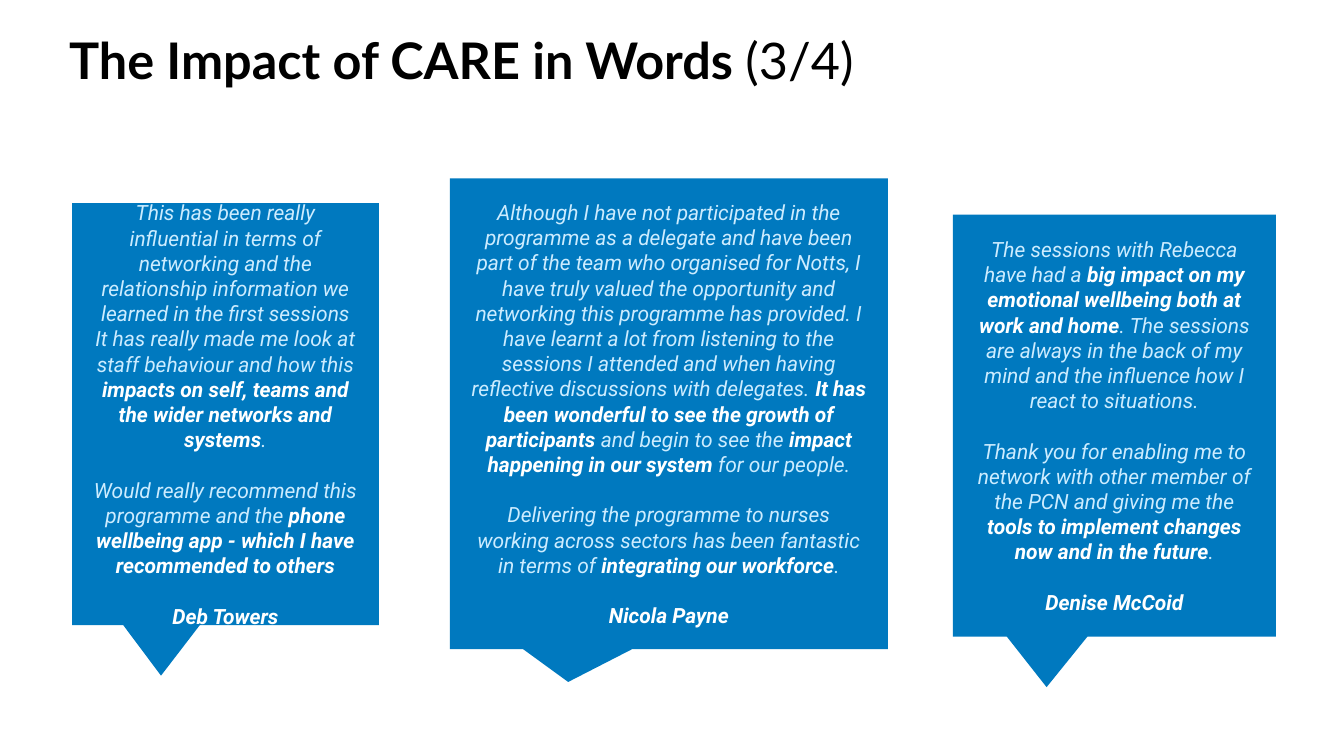
from pptx import Presentation
from pptx.dml.color import RGBColor
from pptx.enum.shapes import MSO_SHAPE
from pptx.enum.text import MSO_ANCHOR, MSO_AUTO_SIZE, PP_ALIGN
from pptx.util import Cm, Pt

CALLOUT = MSO_SHAPE.RECTANGULAR_CALLOUT
MIDDLE = MSO_ANCHOR.MIDDLE
NO_AUTOFIT = MSO_AUTO_SIZE.NONE
CENTER, LEFT = PP_ALIGN.CENTER, PP_ALIGN.LEFT

BLACK = RGBColor(0x00, 0x00, 0x00)
WHITE = RGBColor(0xFF, 0xFF, 0xFF)
BLUE = RGBColor(0x00, 0x79, 0xBF)
PALE_BLUE = RGBColor(0xCC, 0xEC, 0xFF)

TITLE_FONT, QUOTE_FONT = "Lato", "Roboto"
DEFAULT_TAIL = (-0.21, 0.62)
STRONG = "**"

DEB_QUOTE = [
    "This has been really influential in terms of networking and the relationship "
    "information we learned in the first sessions\n"
    "It has really made me look at staff behaviour and how this "
    "**impacts on self, teams and the wider networks and systems**.",
    "Would really recommend this programme and the "
    "**phone wellbeing app - which I have recommended to others**",
    "**Deb Towers**",
]
NICOLA_QUOTE = [
    "Although I have not participated in the programme as a delegate and have been part "
    "of the team who organised for Notts, I have truly valued the opportunity and "
    "networking this programme has provided. I have learnt a lot from listening to the "
    "sessions I attended and when having reflective discussions with delegates. "
    "**It has been wonderful to see the growth of participants **and begin to see the "
    "**impact happening in our system **for our people.",
    "Delivering the programme to nurses working across sectors has been fantastic "
    "in terms of **integrating our workforce**.",
    "**Nicola Payne**",
]
DENISE_QUOTE = [
    "The sessions with Rebecca have had a "
    "**big impact on my emotional wellbeing both at work and home**. The sessions are "
    "always in the back of my mind and the influence how I react to situations.",
    "Thank you for enabling me to network with other member of the PCN and giving me the "
    "**tools to implement changes now and in the future**.",
    "**Denise McCoid**",
]


def add_title(slide, name, counter):
    title = slide.shapes.title
    title.left, title.top, title.width, title.height = Cm(3.23), Cm(1.5), Cm(58.37), Cm(3)
    frame = title.text_frame
    frame.auto_size = NO_AUTOFIT
    frame.vertical_anchor = MIDDLE
    heading = frame.paragraphs[0]
    heading.alignment = LEFT
    heading.font.name = TITLE_FONT
    heading.font.size = Pt(72)
    heading.font.color.rgb = BLACK
    for words, bold in ((name, True), (counter, False)):
        run = heading.add_run()
        run.text = words
        run.font.bold = bold


def write_paragraph(paragraph, marked_text):
    paragraph.alignment = CENTER
    paragraph.font.name = QUOTE_FONT
    paragraph.font.size = Pt(30)
    paragraph.font.italic = True
    for position, words in enumerate(marked_text.split(STRONG)):
        if words:
            strong = position % 2 == 1
            run = paragraph.add_run()
            run.text = words
            run.font.bold = strong
            run.font.color.rgb = WHITE if strong else PALE_BLUE


def add_quote(slide, left, top, width, height, blocks, tail=DEFAULT_TAIL):
    bubble = slide.shapes.add_shape(CALLOUT, Cm(left), Cm(top), Cm(width), Cm(height))
    bubble.adjustments[0], bubble.adjustments[1] = tail
    bubble.shadow.inherit = False
    bubble.fill.solid()
    bubble.fill.fore_color.rgb = BLUE
    bubble.line.fill.background()
    frame = bubble.text_frame
    frame.word_wrap = True
    frame.auto_size = NO_AUTOFIT
    frame.vertical_anchor = MIDDLE
    frame.margin_left = frame.margin_right = Cm(1)
    frame.margin_top = frame.margin_bottom = Cm(1)
    for block_number, block in enumerate(blocks):
        for line_number, line in enumerate(block.split("\n")):
            first = block_number == line_number == 0
            paragraph = frame.paragraphs[0] if first else frame.add_paragraph()
            write_paragraph(paragraph, line)
            if block_number and not line_number:
                paragraph.space_before = Pt(36)


def main():
    presentation = Presentation()
    presentation.slide_width, presentation.slide_height = Cm(67.74), Cm(38.1)
    slide = presentation.slides.add_slide(presentation.slide_layouts[5])
    add_title(slide, "The Impact of CARE in Words ", "(3/4)")
    add_quote(slide, 3.63, 10.24, 15.47, 21.26, DEB_QUOTE)
    add_quote(slide, 48.03, 10.82, 16.28, 21.26, DENISE_QUOTE)
    add_quote(slide, 22.68, 8.99, 22.07, 23.72, NICOLA_QUOTE, tail=(-0.23, 0.57))
    presentation.save("out.pptx")


if __name__ == "__main__":
    main()
